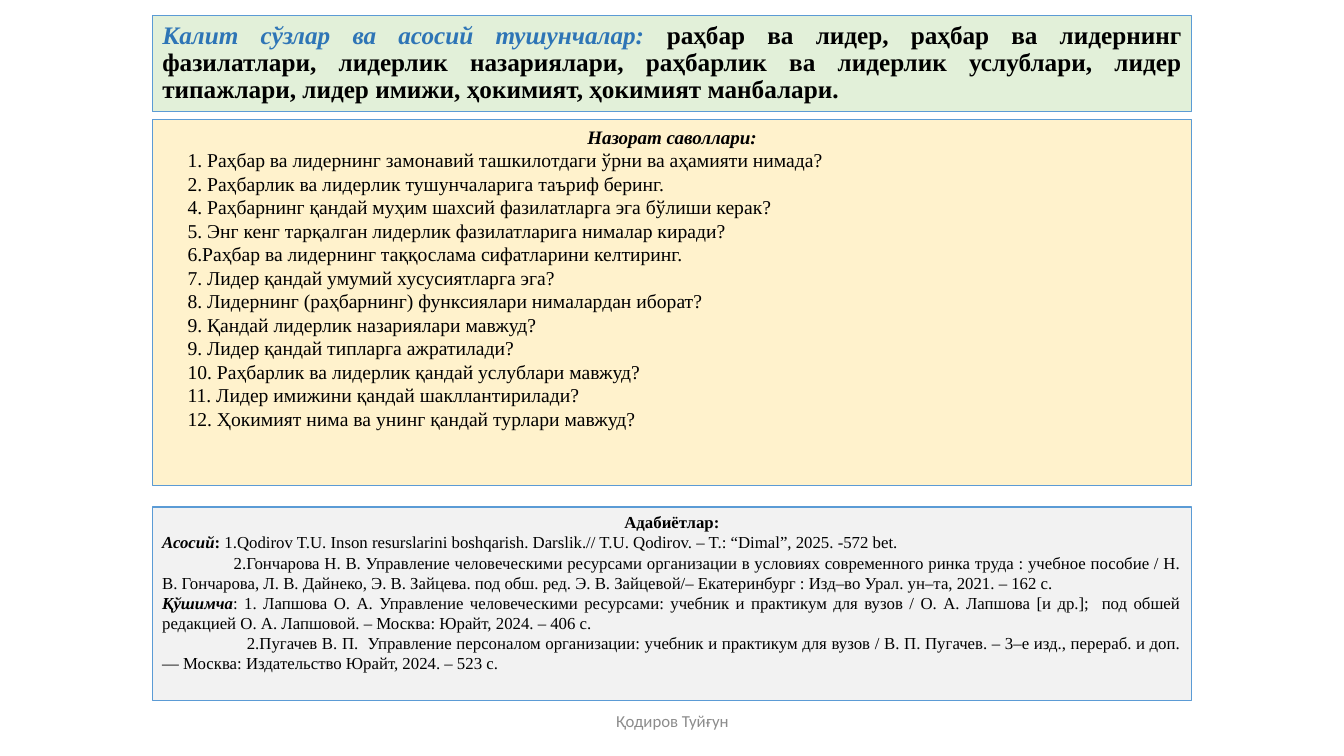
"""Build the slide with key words, review questions and literature."""
from dataclasses import dataclass
from typing import Optional

from lxml.etree import SubElement
from pptx import Presentation
from pptx.dml.color import RGBColor
from pptx.enum.shapes import MSO_SHAPE
from pptx.enum.text import MSO_ANCHOR, MSO_AUTO_SIZE, PP_ALIGN
from pptx.oxml.ns import qn
from pptx.util import Inches, Pt


@dataclass(frozen=True)
class Theme:
    serif: str = "Times New Roman"
    sans: str = "Calibri"
    text: str = "000000"
    accent: str = "2E75B6"
    border: str = "5B9BD5"
    muted: str = "8C8C8C"
    green: str = "E2F0D9"
    yellow: str = "FFF2CC"
    gray: str = "F2F2F2"
    title_size: float = 18
    heading_size: float = 13.6
    question_size: float = 14
    small_size: float = 12


@dataclass(frozen=True)
class Run:
    text: str
    bold: bool = False
    italic: bool = False
    color: str = Theme.text


@dataclass(frozen=True)
class Line:
    runs: tuple[Run, ...]
    size: float
    align: PP_ALIGN = PP_ALIGN.JUSTIFY
    margin: float = 0
    first_indent: float = 0
    spacing: Optional[float] = None
    font: str = Theme.serif


THEME = Theme()
PANEL_LEFT, PANEL_WIDTH = 1.51, 10.31

QUESTIONS = (
    "1. Раҳбар ва лидернинг замонавий ташкилотдаги ўрни ва аҳамияти нимада?",
    "2. Раҳбарлик ва лидерлик тушунчаларига таъриф беринг.",
    "4. Раҳбарнинг қандай муҳим шахсий фазилатларга эга бўлиши керак?",
    "5. Энг кенг тарқалган лидерлик фазилатларига нималар киради?",
    "6.Раҳбар ва лидернинг таққослама сифатларини келтиринг.",
    "7. Лидер қандай умумий хусусиятларга эга?",
    "8. Лидернинг (раҳбарнинг) функсиялари нималардан иборат?",
    "9. Қандай лидерлик назариялари мавжуд?",
    "9. Лидер қандай типларга ажратилади?",
    "10. Раҳбарлик ва лидерлик қандай услублари мавжуд?",
    "11. Лидер имижини қандай шакллантирилади?",
    "12. Ҳокимият нима ва унинг қандай турлари мавжуд?",
)

KEY_WORDS = (
    Line((
        Run("Калит сўзлар ва асосий тушунчалар: ", bold=True, italic=True, color=THEME.accent),
        Run("раҳбар ва лидер, раҳбар ва лидернинг фазилатлари, лидерлик назариялари, "
            "раҳбарлик ва лидерлик услублари, лидер типажлари, лидер имижи, ҳокимият, "
            "ҳокимият манбалари.", bold=True),
    ), THEME.title_size, spacing=0.9),
)

REVIEW = (
    Line((Run("Назорат саволлари:", bold=True, italic=True),),
         THEME.heading_size, PP_ALIGN.CENTER),
    *(Line((Run(question),), THEME.question_size, margin=0.25) for question in QUESTIONS),
)

LITERATURE = (
    Line((Run("Адабиётлар:", bold=True),), THEME.small_size, PP_ALIGN.CENTER),
    Line((
        Run("Асосий", bold=True, italic=True),
        Run(":", bold=True),
        Run(" 1.Qodirov T.U. Inson resurslarini boshqarish. Darslik.// T.U. Qodirov. "
            "– T.: “Dimal”, 2025. -572 bet."),
    ), THEME.small_size),
    Line((
        Run("2.Гончарова Н. В. Управление человеческими ресурсами организaции в условиях "
            "современного ринка труда : учебное пособие / Н. В. Гончарова, Л. В. Дайнеко, "
            "Э. В. Зайцева. под обш. ред. Э. В. Зайцевой/– Екатеринбург : Изд–во Урал. "
            "ун–та, 2021. – 162 с."),
    ), THEME.small_size, first_indent=0.71),
    Line((
        Run("Қўшимча", bold=True, italic=True),
        Run(": 1. Лапшова О. А. Управление человеческими ресурсами: учебник и практикум "
            "для вузов / О. А. Лапшова [и др.];  под обшей редакцией О. А. Лапшовой. "
            "– Москва: Юрайт, 2024. – 406 с."),
    ), THEME.small_size),
    Line((
        Run("2.Пугачев В. П.  Управление персоналом организaции: учебник и практикум для "
            "вузов / В. П. Пугачев. – 3–е изд., перераб. и доп. — Москва: Издательство "
            "Юрайт, 2024. – 523 с."),
    ), THEME.small_size, first_indent=0.84),
)

AUTHOR = (
    Line((Run("Қодиров Туйғун", color=THEME.muted),),
         THEME.small_size, PP_ALIGN.CENTER, font=THEME.sans),
)


def add_run(paragraph, text: str, *, font: str, size: float, color: str,
            bold: bool, italic: bool) -> None:
    """Append one formatted run to a paragraph."""
    run = paragraph.add_run()
    run.text = text
    run.font.name = font
    run.font.size = Pt(size)
    run.font.bold = bold
    run.font.italic = italic
    run.font.color.rgb = RGBColor.from_string(color)


def write_lines(shape, lines: tuple[Line, ...], *, anchor: MSO_ANCHOR) -> None:
    """Fill a shape with formatted paragraphs."""
    frame = shape.text_frame
    frame.word_wrap = True
    frame.auto_size = MSO_AUTO_SIZE.NONE
    frame.vertical_anchor = anchor
    for index, line in enumerate(lines):
        paragraph = frame.add_paragraph() if index else frame.paragraphs[0]
        paragraph.alignment = line.align
        paragraph.space_before = paragraph.space_after = Pt(0)
        if line.spacing:
            paragraph.line_spacing = line.spacing
        properties = paragraph._p.get_or_add_pPr()
        properties.set("marL", str(Inches(line.margin)))
        properties.set("indent", str(Inches(line.first_indent)))
        SubElement(properties, qn("a:buNone"))
        for run in line.runs:
            add_run(paragraph, run.text, font=line.font, size=line.size,
                    color=run.color, bold=run.bold, italic=run.italic)


def format_panel(shape, top: float, height: float, fill: str) -> None:
    """Place a full-width panel and set its fill and border."""
    shape.left, shape.width = Inches(PANEL_LEFT), Inches(PANEL_WIDTH)
    shape.top, shape.height = Inches(top), Inches(height)
    shape.fill.solid()
    shape.fill.fore_color.rgb = RGBColor.from_string(fill)
    shape.line.color.rgb = RGBColor.from_string(THEME.border)
    shape.line.width = Pt(0.75)


def main() -> None:
    """Create the presentation and save it."""
    presentation = Presentation()
    presentation.slide_width, presentation.slide_height = Inches(13.33), Inches(7.5)
    slide = presentation.slides.add_slide(presentation.slide_layouts[1])

    title, body = slide.shapes.title, slide.placeholders[1]
    format_panel(title, 0.15, 0.96, THEME.green)
    write_lines(title, KEY_WORDS, anchor=MSO_ANCHOR.MIDDLE)
    format_panel(body, 1.19, 3.63, THEME.yellow)
    write_lines(body, REVIEW, anchor=MSO_ANCHOR.TOP)

    author = slide.shapes.add_textbox(Inches(4.42), Inches(6.95), Inches(4.5), Inches(0.4))
    write_lines(author, AUTHOR, anchor=MSO_ANCHOR.MIDDLE)

    literature = slide.shapes.add_shape(
        MSO_SHAPE.RECTANGLE, Inches(PANEL_LEFT), Inches(5.03), Inches(PANEL_WIDTH), Inches(1.92))
    literature.shadow.inherit = False
    format_panel(literature, 5.03, 1.92, THEME.gray)
    write_lines(literature, LITERATURE, anchor=MSO_ANCHOR.TOP)

    presentation.save("out.pptx")


if __name__ == "__main__":
    main()
